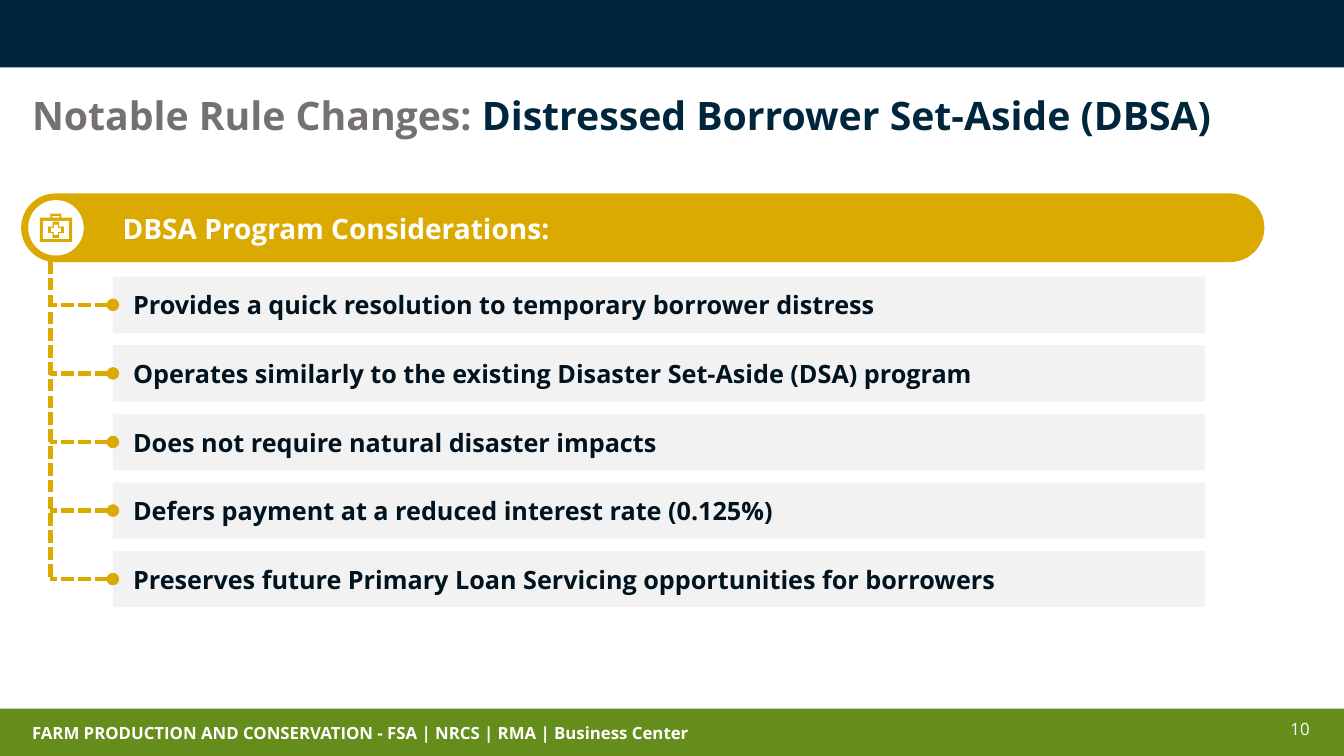
from lxml import etree
from pptx import Presentation
from pptx.dml.color import RGBColor
from pptx.enum.shapes import MSO_CONNECTOR, MSO_SHAPE
from pptx.enum.text import MSO_ANCHOR, PP_ALIGN
from pptx.oxml.ns import qn
from pptx.util import Inches, Pt

RECT, PILL = MSO_SHAPE.RECTANGLE, MSO_SHAPE.ROUNDED_RECTANGLE
OVAL, CROSS = MSO_SHAPE.OVAL, MSO_SHAPE.CROSS
STRAIGHT = MSO_CONNECTOR.STRAIGHT
TOP, MIDDLE = MSO_ANCHOR.TOP, MSO_ANCHOR.MIDDLE
LEFT = PP_ALIGN.LEFT

W, H = 13.33, 7.5
FONT = "Open Sans"
COLORS = {
    "navy": "00263E",
    "green": "658D1B",
    "gold": "DAAA00",
    "gray": "767171",
    "panel": "F2F2F2",
    "ink": "00131F",
    "white": "FFFFFF",
}
CONSIDERATIONS = [
    "Provides a quick resolution to temporary borrower distress",
    "Operates similarly to the existing Disaster Set-Aside (DSA) program",
    "Does not require natural disaster impacts",
    "Defers payment at a reduced interest rate (0.125%)",
    "Preserves future Primary Loan Servicing opportunities for borrowers",
]


def rgb(name):
    return RGBColor.from_string(COLORS[name])


def write(sp, *parts, size=18, bold=True, anchor=TOP, left=0.1, top=0.05,
          bottom=0.05, spacing=None):
    """Fill a shape with one paragraph of (text, colour) parts."""
    tf = sp.text_frame
    tf.word_wrap = True
    tf.vertical_anchor = anchor
    tf.margin_left, tf.margin_right = Inches(left), Inches(0.1)
    tf.margin_top, tf.margin_bottom = Inches(top), Inches(bottom)
    p = tf.paragraphs[0]
    p.alignment = LEFT
    p.line_spacing = spacing
    for text, color in parts:
        r = p.add_run()
        r.text = text
        r.font.name, r.font.size, r.font.bold = FONT, Pt(size), bold
        r.font.color.rgb = rgb(color)


def add_text(s, box, *parts, **fmt):
    write(s.shapes.add_textbox(*map(Inches, box)), *parts, **fmt)


def add_block(s, kind, box, fill):
    sp = s.shapes.add_shape(kind, *map(Inches, box))
    sp.shadow.inherit = False
    sp.fill.solid()
    sp.fill.fore_color.rgb = rgb(fill)
    sp.line.fill.background()
    return sp


def add_dashes(s, start, end, dot=False):
    """Draw a dashed gold line, with a dot at its start if asked."""
    line = s.shapes.add_connector(STRAIGHT, *map(Inches, (*start, *end)))
    line.line.width = Pt(3)
    line.line.color.rgb = rgb("gold")
    ln = line.line._get_or_add_ln()
    etree.SubElement(ln, qn("a:prstDash"), val="sysDash")
    if dot:
        etree.SubElement(ln, qn("a:headEnd"), type="oval")
    etree.SubElement(line._element.spPr, qn("a:effectLst"))


def add_frame(s):
    add_block(s, RECT, (0, 0, W, 0.67), "navy")
    add_block(s, RECT, (0, 7.03, W, 0.47), "green")
    add_text(s, (0.22, 7.12, 7.84, 0.3),
             ("FARM PRODUCTION AND CONSERVATION - FSA | NRCS | RMA | Business Center", "white"),
             size=12)
    add_text(s, (12.7, 7.08, 0.45, 0.4), ("10", "white"), size=12, bold=False)


def add_first_aid_icon(s, x, y, size):
    """Draw a first-aid case on a white disc, centred on the disc."""
    add_block(s, OVAL, (x, y, size, size), "white")
    cx, cy = x + size / 2, y + size / 2
    for kind, w, h, dy, color in [
        (RECT, 0.11, 0.08, -0.1, "gold"),
        (RECT, 0.07, 0.03, -0.1, "white"),
        (RECT, 0.32, 0.24, 0.02, "gold"),
        (RECT, 0.26, 0.18, 0.02, "white"),
        (CROSS, 0.16, 0.16, 0.02, "gold"),
        (CROSS, 0.1, 0.1, 0.02, "white"),
    ]:
        sp = add_block(s, kind, (cx - w / 2, cy + dy - h / 2, w, h), color)
        if kind == CROSS:
            sp.adjustments[0] = 0.3


def add_header(s, x, y, w, h):
    sp = add_block(s, PILL, (x, y, w, h), "gold")
    sp.adjustments[0] = 0.5
    sp.line.color.rgb = rgb("gold")
    sp.line.width = Pt(1.5)
    write(sp, ("DBSA Program Considerations:", "white"), size=20,
          anchor=MIDDLE, left=0.9, top=0.06)
    disc = 0.55
    add_first_aid_icon(s, x + 0.06, y + (h - disc) / 2, disc)


def add_considerations(s, x, y, w, spine_top, row=0.56, pitch=0.68):
    """Stack the rows and tie each one to a dashed spine on the left."""
    spine = x - 0.62
    for i, text in enumerate(CONSIDERATIONS):
        top = y + i * pitch
        middle = top + row / 2
        sp = add_block(s, RECT, (x, top, w, row), "panel")
        write(sp, (text, "ink"), anchor=MIDDLE, left=0.2)
        add_dashes(s, (x, middle), (spine, middle), dot=True)
    add_dashes(s, (spine, spine_top), (spine, middle))


def main():
    prs = Presentation()
    prs.slide_width, prs.slide_height = Inches(W), Inches(H)
    s = prs.slides.add_slide(prs.slide_layouts[6])
    add_frame(s)
    add_text(s, (0.22, 0.91, 12.78, 0.59),
             ("Notable Rule Changes: ", "gray"),
             ("Distressed Borrower Set-Aside (DBSA)", "navy"),
             size=28, spacing=0.9)
    add_header(s, 0.22, 1.93, 12.31, 0.66)
    add_considerations(s, 1.12, 2.745, 10.83, spine_top=2.59)
    prs.save("out.pptx")


if __name__ == "__main__":
    main()
